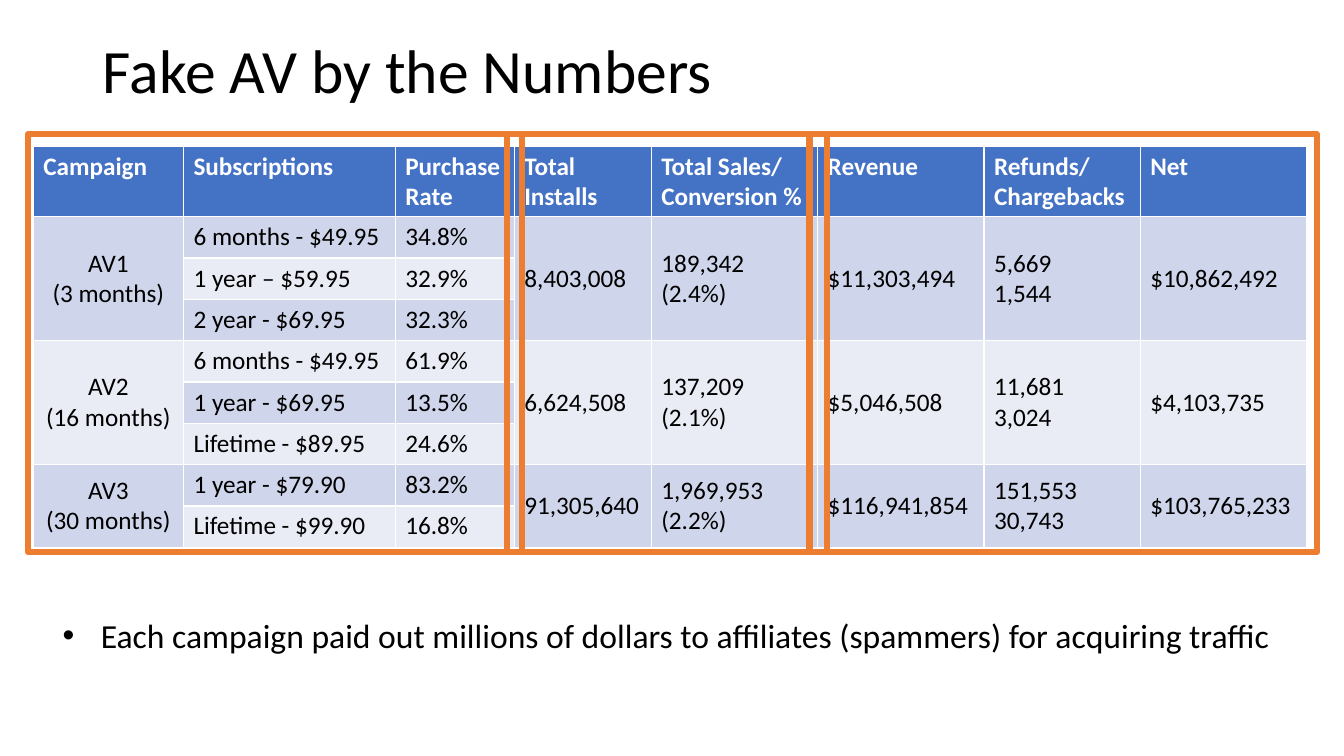
"""Build the slide on fake antivirus campaigns, their sales and their revenue."""
import pptx
import pptx.dml.color
import pptx.enum.text
import pptx.util

Inches = pptx.util.Inches
ALIGN = pptx.enum.text.PP_ALIGN
ANCHOR = pptx.enum.text.MSO_ANCHOR
RECTANGLE = pptx.enum.shapes.MSO_SHAPE.RECTANGLE

COLOURS = {
    "text": "000000",
    "header_text": "FFFFFF",
    "header": "4472C4",
    "odd_band": "CFD5EA",
    "even_band": "E9EBF5",
    "frame": "ED7D31",
}
HEADERS = [
    "Campaign", "Subscriptions", "Purchase Rate", "Total Installs",
    "Total Sales/\nConversion %", "Revenue", "Refunds/\nChargebacks", "Net",
]
COLUMN_WIDTHS = [1.49, 2.1, 1.18, 1.36, 1.65, 1.65, 1.55, 1.65]
ROW_HEIGHT = 0.41
CAMPAIGNS = [
    ("AV1\n(3 months)",
     [("6 months - $49.95", "34.8%"), ("1 year – $59.95", "32.9%"), ("2 year - $69.95", "32.3%")],
     ["8,403,008", "189,342\n(2.4%)", "$11,303,494", "5,669\n1,544", "$10,862,492"]),
    ("AV2\n(16 months)",
     [("6 months - $49.95", "61.9%"), ("1 year - $69.95", "13.5%"), ("Lifetime - $89.95", "24.6%")],
     ["6,624,508", "137,209\n(2.1%)", "$5,046,508", "11,681\n3,024", "$4,103,735"]),
    ("AV3\n(30 months)",
     [("1 year - $79.90", "83.2%"), ("Lifetime - $99.90", "16.8%")],
     ["91,305,640", "1,969,953\n(2.2%)", "$116,941,854", "151,553\n30,743", "$103,765,233"]),
]
FRAMES = [(0.28, 4.9), (5.03, 3.17), (8.03, 5.03)]


def colour(name):
    return pptx.dml.color.RGBColor.from_string(COLOURS[name])


def set_values(target, values):
    for name, value in values.items():
        setattr(target, name, value)


def place(shape, left, top, width, height):
    lengths = {"left": left, "top": top, "width": width, "height": height}
    set_values(shape, {name: Inches(value) for name, value in lengths.items()})


def write(frame, text, size, ink="text", bold=False, paragraph_format=None):
    frame.text = text
    for para in frame.paragraphs:
        set_values(para, paragraph_format or {})
        for span in para.runs:
            set_values(span.font, {"name": "Calibri", "size": pptx.util.Pt(size), "bold": bold})
            span.font.color.rgb = colour(ink)


def add_title(page):
    title = page.shapes.title
    place(title, 0.92, 0.23, 11.5, 1)
    title.text_frame.vertical_anchor = ANCHOR.MIDDLE
    write(title.text_frame, "Fake AV by the Numbers", 44,
          paragraph_format={"alignment": ALIGN.LEFT, "line_spacing": 0.9})


def add_takeaway(page):
    box = page.placeholders[1]
    place(box, 0.52, 6.05, 12.29, 0.5)
    set_values(box.text_frame, {
        "word_wrap": False,
        "auto_size": pptx.enum.text.MSO_AUTO_SIZE.SHAPE_TO_FIT_TEXT,
        "vertical_anchor": ANCHOR.TOP,
    })
    write(box.text_frame,
          "Each campaign paid out millions of dollars to affiliates (spammers) for acquiring traffic",
          24, paragraph_format={"space_before": pptx.util.Pt(0)})
    properties = box.text_frame.paragraphs[0]._p.get_or_add_pPr()
    properties.set("marL", str(Inches(0.38)))
    properties.set("indent", str(Inches(-0.38)))


def fill_rows(table):
    for row_number, row in enumerate(table.rows):
        row.height = Inches(ROW_HEIGHT)
        band = "header" if row_number == 0 else "odd_band" if row_number % 2 else "even_band"
        for cell in row.cells:
            cell.fill.solid()
            cell.fill.fore_color.rgb = colour(band)


def add_campaign(table, first_row, campaign, plans, totals):
    last_row = first_row + len(plans) - 1
    for row, plan in enumerate(plans, first_row):
        for column, text in enumerate(plan, 1):
            write(table.cell(row, column).text_frame, text, 18)
    for column, text in [(0, campaign), *enumerate(totals, 3)]:
        cell = table.cell(first_row, column)
        cell.merge(table.cell(last_row, column))
        cell.vertical_anchor = ANCHOR.MIDDLE
        alignment = ALIGN.LEFT if column else ALIGN.CENTER
        write(cell.text_frame, text, 18, paragraph_format={"alignment": alignment})
    return last_row + 1


def add_campaign_table(page):
    row_count = 1 + sum(len(plans) for _, plans, _ in CAMPAIGNS)
    table = page.shapes.add_table(
        row_count, len(HEADERS), Inches(0.33), Inches(1.45),
        Inches(sum(COLUMN_WIDTHS)), Inches(row_count * ROW_HEIGHT)).table
    for column, width in zip(table.columns, COLUMN_WIDTHS):
        column.width = Inches(width)
    fill_rows(table)
    for cell, text in zip(table.rows[0].cells, HEADERS):
        write(cell.text_frame, text, 18, "header_text", True)
    next_row = 1
    for campaign in CAMPAIGNS:
        next_row = add_campaign(table, next_row, *campaign)


def add_frame(page, left, width):
    frame = page.shapes.add_shape(
        RECTANGLE, Inches(left), Inches(1.33), Inches(width), Inches(4.15))
    frame.shadow.inherit = False
    frame.fill.background()
    frame.line.color.rgb = colour("frame")
    frame.line.width = pptx.util.Pt(4.5)


def main():
    deck = pptx.Presentation()
    set_values(deck, {"slide_width": Inches(13.33), "slide_height": Inches(7.5)})
    page = deck.slides.add_slide(deck.slide_layouts[1])
    add_title(page)
    add_campaign_table(page)
    add_takeaway(page)
    for left, width in FRAMES:
        add_frame(page, left, width)
    deck.save("out.pptx")


if __name__ == "__main__":
    main()
